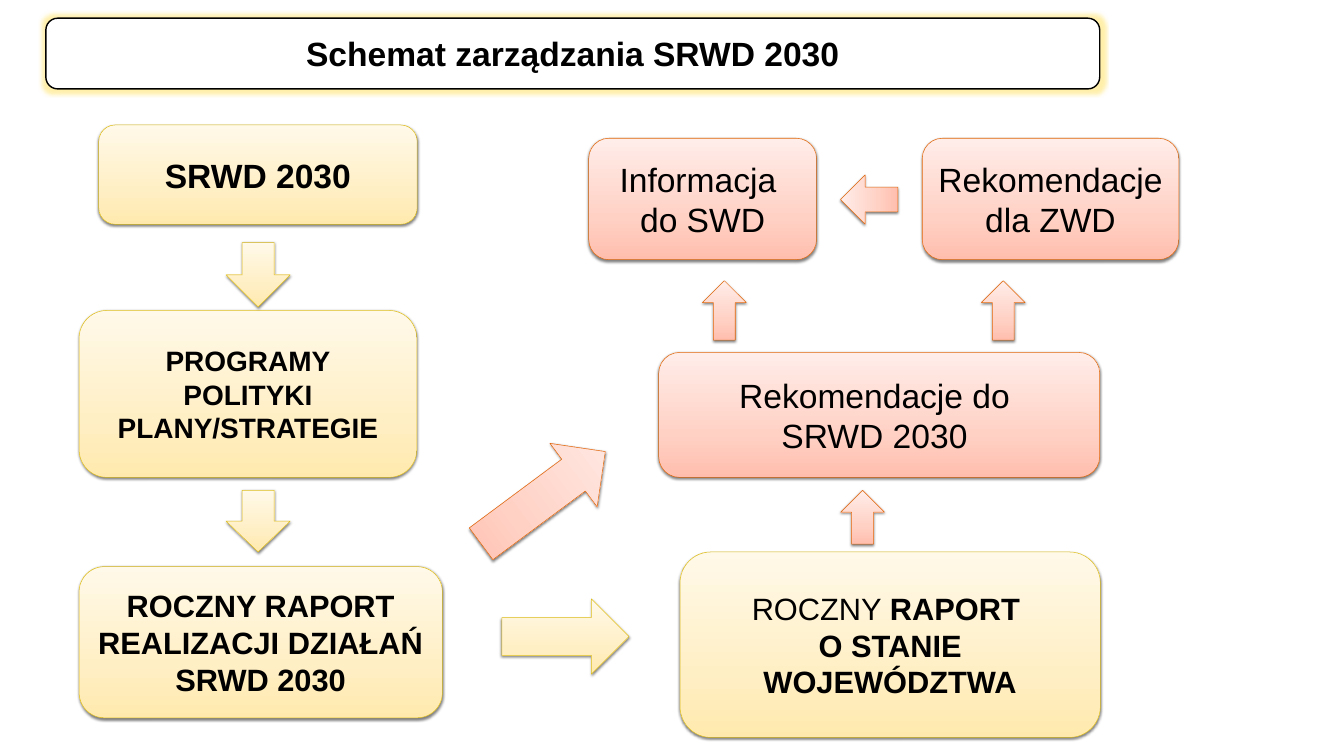
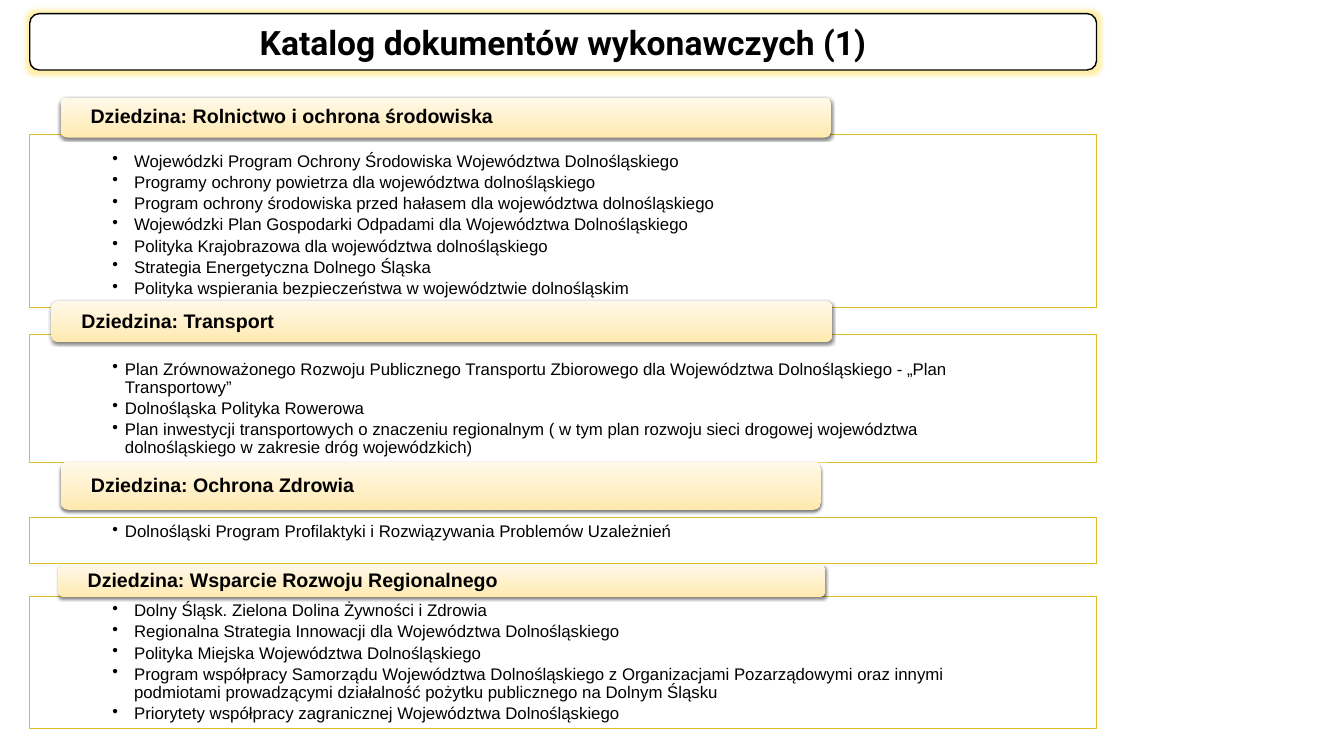
import pptx
import pptx.util
import pptx.dml.color
import pptx.enum.shapes
import pptx.enum.text
import pptx.oxml
import pptx.oxml.ns

Pt = pptx.util.Pt
Shape = pptx.enum.shapes.MSO_SHAPE
Align = pptx.enum.text.PP_ALIGN
Anchor = pptx.enum.text.MSO_ANCHOR
qn = pptx.oxml.ns.qn
NS = pptx.oxml.ns.nsdecls("a")


class Theme:
    text = "000000"
    font = "Arial"
    heading_font = "Roboto"
    title_size = 48
    report_size = 44
    program_size = 40
    field_size = 28
    item_size = 24
    shadow = (
        f'<a:outerShdw {NS} blurRad="{Pt(4)}" dist="{Pt(2)}" dir="5400000" rotWithShape="0">'
        '<a:srgbClr val="000000"><a:alpha val="50000"/></a:srgbClr></a:outerShdw>'
    )
    glow = (
        f'<a:glow {NS} rad="{Pt(11)}"><a:srgbClr val="FFD92F">'
        '<a:alpha val="40000"/></a:srgbClr></a:glow>'
    )
    yellow = {"stops": ("FFE9AD", "FFEFC5", "FFF9E9"), "line": "DCBC1E", "width": 0.75, "effect": shadow}
    red = {"stops": ("FFBEAD", "FFD1C5", "FFEDE9"), "line": "DE670B", "width": 0.75, "effect": shadow}
    title = {"fill": "FFFFFF", "line": "000000", "width": 2, "effect": glow}
    band = {"stops": yellow["stops"], "effect": shadow}
    frame = {"fill": "FFFFFF", "opacity": 90, "line": "DCBD23", "width": 0.75}


def draw(page, kind, place, look, turn=0):
    box = page.shapes.add_shape(kind, *[Pt(length) for length in place])
    box.rotation = turn
    box.shadow.inherit = False
    properties = box.element.spPr
    if "stops" in look:
        stops = "".join(
            f'<a:gs pos="{position * 1000}"><a:srgbClr val="{color}"/></a:gs>'
            for position, color in zip((0, 35, 100), look["stops"])
        )
        gradient = (
            f'<a:gradFill {NS} rotWithShape="1"><a:gsLst>{stops}</a:gsLst>'
            '<a:lin ang="16200000" scaled="0"/></a:gradFill>'
        )
        properties.find(qn("a:prstGeom")).addnext(pptx.oxml.parse_xml(gradient))
    else:
        box.fill.solid()
        box.fill.fore_color.rgb = pptx.dml.color.RGBColor.from_string(look["fill"])
    if "opacity" in look:
        alpha = pptx.oxml.parse_xml(f'<a:alpha {NS} val="{look["opacity"] * 1000}"/>')
        properties.find(qn("a:solidFill")).find(qn("a:srgbClr")).append(alpha)
    if "line" in look:
        box.line.color.rgb = pptx.dml.color.RGBColor.from_string(look["line"])
        box.line.width = Pt(look["width"])
    else:
        box.line.fill.background()
    if "effect" in look:
        properties.find(qn("a:effectLst")).append(pptx.oxml.parse_xml(look["effect"]))
    return box


def write(box, lines, size, bold=False, font=Theme.font, align=Align.CENTER,
          anchor=Anchor.MIDDLE, insets=(5, 5, 5, 5), bullet_indent=0, spacing=None, after=0):
    frame = box.text_frame
    frame.word_wrap = True
    frame.vertical_anchor = anchor
    for side, inset in zip(("left", "top", "right", "bottom"), insets):
        setattr(frame, f"margin_{side}", Pt(inset))
    for index, line in enumerate(lines):
        para = frame.add_paragraph() if index else frame.paragraphs[0]
        if bullet_indent:
            settings = para._p.get_or_add_pPr()
            settings.set("marL", str(Pt(bullet_indent)))
            settings.set("indent", str(-Pt(bullet_indent)))
            settings.append(pptx.oxml.parse_xml(f'<a:buChar {NS} char="•"/>'))
        layout = {"alignment": align, "line_spacing": spacing, "space_after": Pt(after)}
        for name, value in layout.items():
            setattr(para, name, value)
        for part in [(line, bold)] if isinstance(line, str) else line:
            if part is None:
                para.add_line_break()
                continue
            span = para.add_run()
            span.text, weight = part
            for name, value in {"name": font, "size": Pt(size), "bold": weight}.items():
                setattr(span.font, name, value)
            span.font.color.rgb = pptx.dml.color.RGBColor.from_string(Theme.text)


deck = pptx.Presentation()
deck.slide_width = Pt(1920)
deck.slide_height = Pt(1080)

titles = [
    ("Schemat zarządzania SRWD 2030", (65.5, 26, 1505.5, 101), Theme.font),
    ("Katalog dokumentów wykonawczych (1)", (42.5, 19.5, 1524, 80.5), Theme.heading_font),
]
pages = []
for title, place, font in titles:
    page = deck.slides.add_slide(deck.slide_layouts[6])
    box = draw(page, Shape.ROUNDED_RECTANGLE, place, Theme.title)
    write(box, [title], Theme.title_size, bold=True, font=font)
    pages.append(page)
scheme, catalogue = pages

steps = [
    ((141, 178.5, 455, 142), Theme.yellow, Theme.title_size, True, ["SRWD 2030"]),
    ((113, 809.5, 519, 216), Theme.yellow, Theme.report_size, True,
     ["ROCZNY RAPORT REALIZACJI DZIAŁAŃ SRWD 2030"]),
    ((113, 443.5, 482.5, 238.5), Theme.yellow, Theme.program_size, True,
     ["PROGRAMY", "POLITYKI", "PLANY/STRATEGIE"]),
    ((1317.5, 197.5, 366.5, 173.5), Theme.red, Theme.title_size, False, ["Rekomendacje dla ZWD"]),
    ((941, 503.5, 630, 178.5), Theme.red, Theme.title_size, False,
     ["Rekomendacje do ", "SRWD 2030 "]),
    ((971.5, 788.5, 600.5, 265), Theme.yellow, Theme.report_size, True,
     [[("ROCZNY ", False), ("RAPORT ", True), None, ("O STANIE WOJEWÓDZTWA", True)]]),
    ((841, 197.5, 325.5, 173.5), Theme.red, Theme.title_size, False, ["Informacja ", "do SWD"]),
]
for place, look, size, bold, lines in steps:
    box = draw(scheme, Shape.ROUNDED_RECTANGLE, place, look)
    write(box, lines, size, bold)

arrows = [
    (Shape.DOWN_ARROW, (323, 346.5, 91.5, 92), Theme.yellow, 0),
    (Shape.DOWN_ARROW, (323, 700.5, 91.5, 88), Theme.yellow, 0),
    (Shape.RIGHT_ARROW, (717, 855.5, 181.5, 107.5), Theme.yellow, 0),
    (Shape.UP_ARROW, (1003.5, 401, 62.5, 85), Theme.red, 0),
    (Shape.UP_ARROW, (1402, 401, 62.5, 85), Theme.red, 0),
    (Shape.UP_ARROW, (1201, 700.5, 62.5, 77), Theme.red, 0),
    (Shape.UP_ARROW, (719.5, 600.5, 113, 221), Theme.red, 53.4),
    (Shape.UP_ARROW, (1206.5, 244, 70.5, 82), Theme.red, 270),
]
for kind, place, look, turn in arrows:
    draw(scheme, kind, place, look, turn)

fields = [
    ("Dziedzina: Rolnictwo i ochrona środowiska", (86.5, 139.5, 1101, 57), (192.5, 246), 8, 31, [
        "Wojewódzki Program Ochrony Środowiska Województwa Dolnośląskiego",
        "Programy ochrony powietrza dla województwa dolnośląskiego",
        "Program ochrony środowiska przed hałasem dla województwa dolnośląskiego",
        "Wojewódzki Plan Gospodarki Odpadami dla Województwa Dolnośląskiego",
        "Polityka Krajobrazowa dla województwa dolnośląskiego",
        "Strategia Energetyczna Dolnego Śląska",
        "Polityka wspierania bezpieczeństwa w województwie dolnośląskim",
    ]),
    ("Dziedzina: Transport", (73.5, 430.5, 1115.5, 58.5), (478, 182), 37, 18, [
        "Plan Zrównoważonego Rozwoju Publicznego Transportu Zbiorowego dla Województwa "
        "Dolnośląskiego - „Plan Transportowy”",
        "Dolnośląska Polityka Rowerowa",
        "Plan inwestycji transportowych o znaczeniu regionalnym ( w tym plan rozwoju sieci "
        "drogowej województwa dolnośląskiego w zakresie dróg wojewódzkich)",
    ]),
    ("Dziedzina: Ochrona Zdrowia", (86.5, 659.5, 1086.5, 69), (739.5, 65), 8, 18, [
        "Dolnośląski Program Profilaktyki i Rozwiązywania Problemów Uzależnień",
    ]),
    ("Dziedzina: Wsparcie Rozwoju Regionalnego", (83, 807, 1096, 46), (852, 188.5), 8, 31, [
        "Dolny Śląsk. Zielona Dolina Żywności i Zdrowia",
        "Regionalna Strategia Innowacji dla Województwa Dolnośląskiego",
        "Polityka Miejska Województwa Dolnośląskiego",
        "Program współpracy Samorządu Województwa Dolnośląskiego z Organizacjami Pozarządowymi "
        "oraz innymi podmiotami prowadzącymi działalność pożytku publicznego na Dolnym Śląsku",
        "Priorytety współpracy zagranicznej Województwa Dolnośląskiego",
    ]),
]
for number, (name, band, (top, height), inset, indent, documents) in enumerate(fields):
    box = draw(catalogue, Shape.RECTANGLE, (42.5, top, 1524, height), Theme.frame)
    write(box, documents, Theme.item_size, align=Align.LEFT, anchor=Anchor.TOP,
          insets=(118, inset, 118, 13.5), bullet_indent=indent, spacing=0.9, after=4.5)
    if number == 0:
        opening = box.text_frame.paragraphs[0]
        opening.alignment = Align.JUSTIFY
        opening.line_spacing = 1.5
    box = draw(catalogue, Shape.ROUNDED_RECTANGLE, band, Theme.band)
    write(box, [name], Theme.field_size, bold=True, align=Align.LEFT,
          insets=(40, 0, 40, 0), spacing=0.9)

deck.save("out.pptx")
